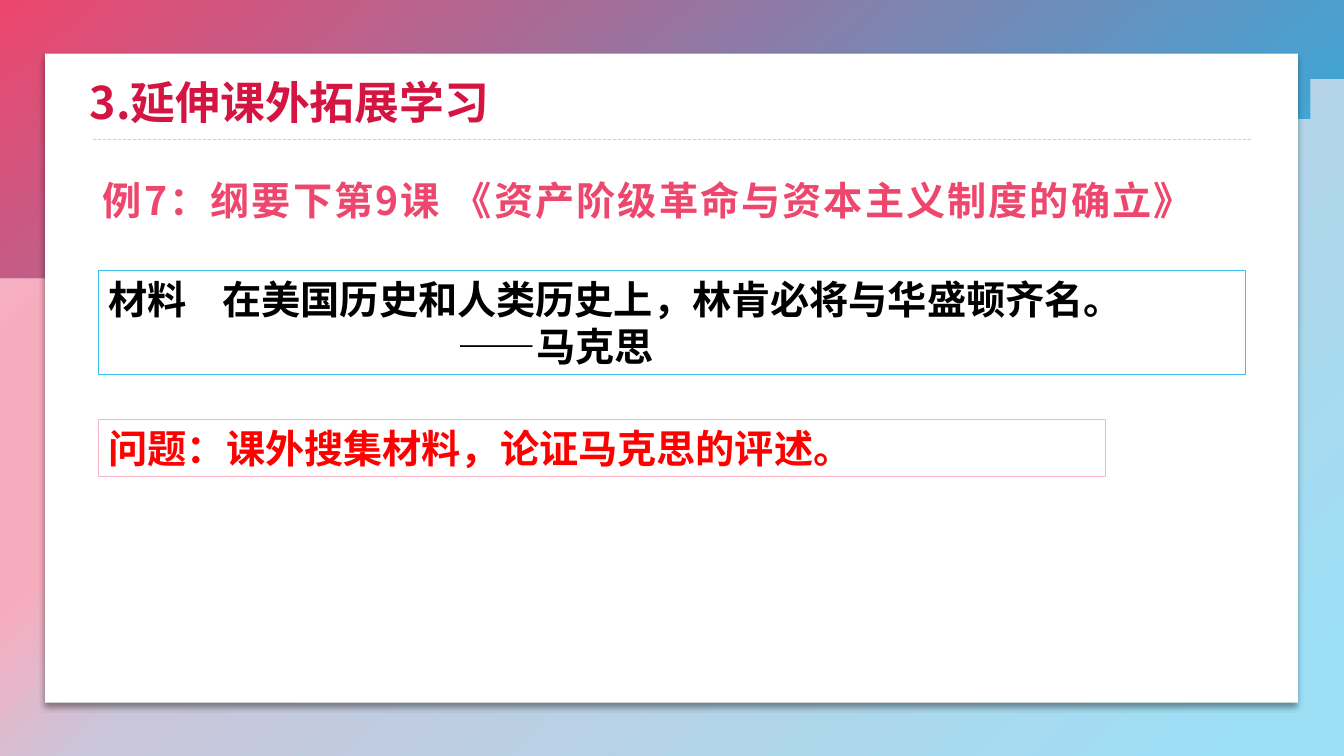
from lxml.etree import SubElement
from pptx import Presentation
from pptx.dml.color import RGBColor
from pptx.enum.dml import MSO_LINE
from pptx.enum.shapes import MSO_CONNECTOR, MSO_SHAPE
from pptx.enum.text import MSO_ANCHOR, PP_ALIGN
from pptx.oxml.ns import qn
from pptx.util import Cm, Pt

FONT = "Noto Sans CJK SC"
WHITE = RGBColor(0xFF, 0xFF, 0xFF)
BLACK = RGBColor(0, 0, 0)
RED = RGBColor(0xFF, 0, 0)
CRIMSON = RGBColor(0xD4, 0x14, 0x41)
ROSE = RGBColor(0xEE, 0x47, 0x6E)
PINK = RGBColor(0xF7, 0xAC, 0xBE)
PALE = RGBColor(0xFA, 0xC8, 0xD3)
BLUSH = RGBColor(0xF8, 0xB5, 0xC5)
LILAC = RGBColor(0xCA, 0xC6, 0xDA)
ICE = RGBColor(0x9D, 0xE0, 0xF6)
AZURE = RGBColor(0x16, 0xB3, 0xE8)
SKY = RGBColor(0x3B, 0xC0, 0xED)
GREY = RGBColor(0xD0, 0xCE, 0xCE)

# Lengths in cm, boxes as left, top, width, height
WIDE, HIGH = 33.87, 19.05
HEAD = ("3.延伸课外拓展学习", (2.01, 1.75, 25.86, 1.63))
TITLE = ("例7：纲要下第9课 《资产阶级革命与资本主义制度的确立》", (2.34, 4.29, 29.21, 1.63))
BOXES = [
    (["材料\t在美国历史和人类历史上，林肯必将与华盛顿齐名。", "——马克思"],
     (2.49, 6.81, 28.91, 2.64), SKY, BLACK),
    (["问题：课外搜集材料，论证马克思的评述。"],
     (2.49, 10.57, 25.37, 1.45), BLUSH, RED),
]
TAB, INDENT = 2.87, 8.8
CARD = (1.14, 1.35, 31.57, 16.36)
RULE = (2.34, 3.51, 31.57, 3.51)
BACK = [(5, ICE, 100), (60, LILAC, 100), (71, PINK, 100), (83, PINK, 100), (100, PALE, 100)]
BAND = [(0, ROSE, 100), (100, AZURE, 90)]
START = (0, 6.55)
WAVE = [
    ((3.1, 7.72), (6.76, 7.9), (9.98, 6.96)),
    ((13.46, 5.97), (16.46, 3.84), (20.12, 3.45)),
    ((23.77, 3.07), (27.64, 4.57), (31.17, 3.61)),
    ((32.18, 3.33), (33.1, 2.82), (WIDE, 2.16)),
]
STEPS = 24


def cms(vals):
    return [Cm(v) for v in vals]


def add(node, tag, **attrs):
    return SubElement(node, qn(tag), {k: str(v) for k, v in attrs.items()})


def tint(node, color, alpha):
    clr = add(node, "a:srgbClr", val=color)
    if alpha < 100:
        add(clr, "a:alpha", val=alpha * 1000)


def blend(owner, fill, stops, angle):
    """Fill with a gradient; the angle runs clockwise."""
    fill.gradient()
    grad = owner.find(".//" + qn("a:gradFill"))
    group = grad.find(qn("a:gsLst"))
    for old in list(group):
        group.remove(old)
    for pos, color, alpha in stops:
        tint(add(group, "a:gs", pos=pos * 1000), color, alpha)
    grad.find(qn("a:lin")).set("ang", str(angle * 60000))


def curve(start, parts):
    """Points along a chain of cubic curves."""
    dots = [start]
    for a, b, end in parts:
        for i in range(1, STEPS + 1):
            t = i / STEPS
            u = 1 - t
            dots.append(tuple(
                u**3 * p + 3 * u * u * t * q + 3 * u * t * t * r + t**3 * s
                for p, q, r, s in zip(start, a, b, end)))
        start = end
    return dots


def write(shape, lines, size, color, anchor=MSO_ANCHOR.TOP):
    frame = shape.text_frame
    frame.word_wrap = True
    frame.vertical_anchor = anchor
    frame.text = "\n".join(lines)
    look = {"size": Pt(size), "bold": True, "name": FONT}
    for para in frame.paragraphs:
        para.alignment = PP_ALIGN.LEFT
        for run in para.runs:
            for key, val in look.items():
                setattr(run.font, key, val)
            run.font.color.rgb = color
            add(run.font._element, "a:ea", typeface=FONT)
    return frame.paragraphs


def main():
    deck = Presentation()
    deck.slide_width, deck.slide_height = Cm(WIDE), Cm(HIGH)
    slide = deck.slides.add_slide(deck.slide_layouts[5])
    shapes = slide.shapes
    blend(slide.element, slide.background.fill, BACK, 225)

    pen = shapes.build_freeform(0, 0, scale=Cm(1))
    pen.add_line_segments(curve(START, WAVE) + [(WIDE, 0)], close=True)
    band = pen.convert_to_shape()
    band.shadow.inherit = False
    band.line.fill.background()
    blend(band._element, band.fill, BAND, 50)

    card = shapes.add_shape(MSO_SHAPE.RECTANGLE, *cms(CARD))
    card.shadow.inherit = False
    card.fill.solid()
    card.fill.fore_color.rgb = WHITE
    card.line.fill.background()
    glow = card._element.spPr.find(qn("a:effectLst"))
    drop = add(glow, "a:outerShdw", blurRad=Pt(4), dist=Pt(3), dir=90 * 60000)
    tint(drop, BLACK, 40)

    rule = shapes.add_connector(MSO_CONNECTOR.STRAIGHT, *cms(RULE))
    rule.line.color.rgb = GREY
    rule.line.width = Pt(0.5)
    rule.line.dash_style = MSO_LINE.DASH
    add(rule._element.spPr, "a:effectLst")

    text, place = HEAD
    write(shapes.add_textbox(*cms(place)), [text], 32, CRIMSON)

    text, place = TITLE
    title = shapes.title
    title.left, title.top, title.width, title.height = cms(place)
    para = write(title, [text], 28, ROSE, MSO_ANCHOR.MIDDLE)[0]
    para.line_spacing = 0.9
    para.runs[0].font._element.set("spc", "150")
    shapes._spTree.append(title._element)

    for lines, place, edge, color in BOXES:
        box = shapes.add_shape(MSO_SHAPE.RECTANGLE, *cms(place))
        box.shadow.inherit = False
        box.fill.background()
        box.line.color.rgb = edge
        box.line.width = Pt(0.75)
        paras = write(box, lines, 28, color)
        if len(paras) > 1:
            tabs = add(paras[0]._p.get_or_add_pPr(), "a:tabLst")
            add(tabs, "a:tab", pos=Cm(TAB), algn="l")
            paras[1]._p.get_or_add_pPr().set("marL", str(Cm(INDENT)))

    deck.save("out.pptx")


if __name__ == "__main__":
    main()
